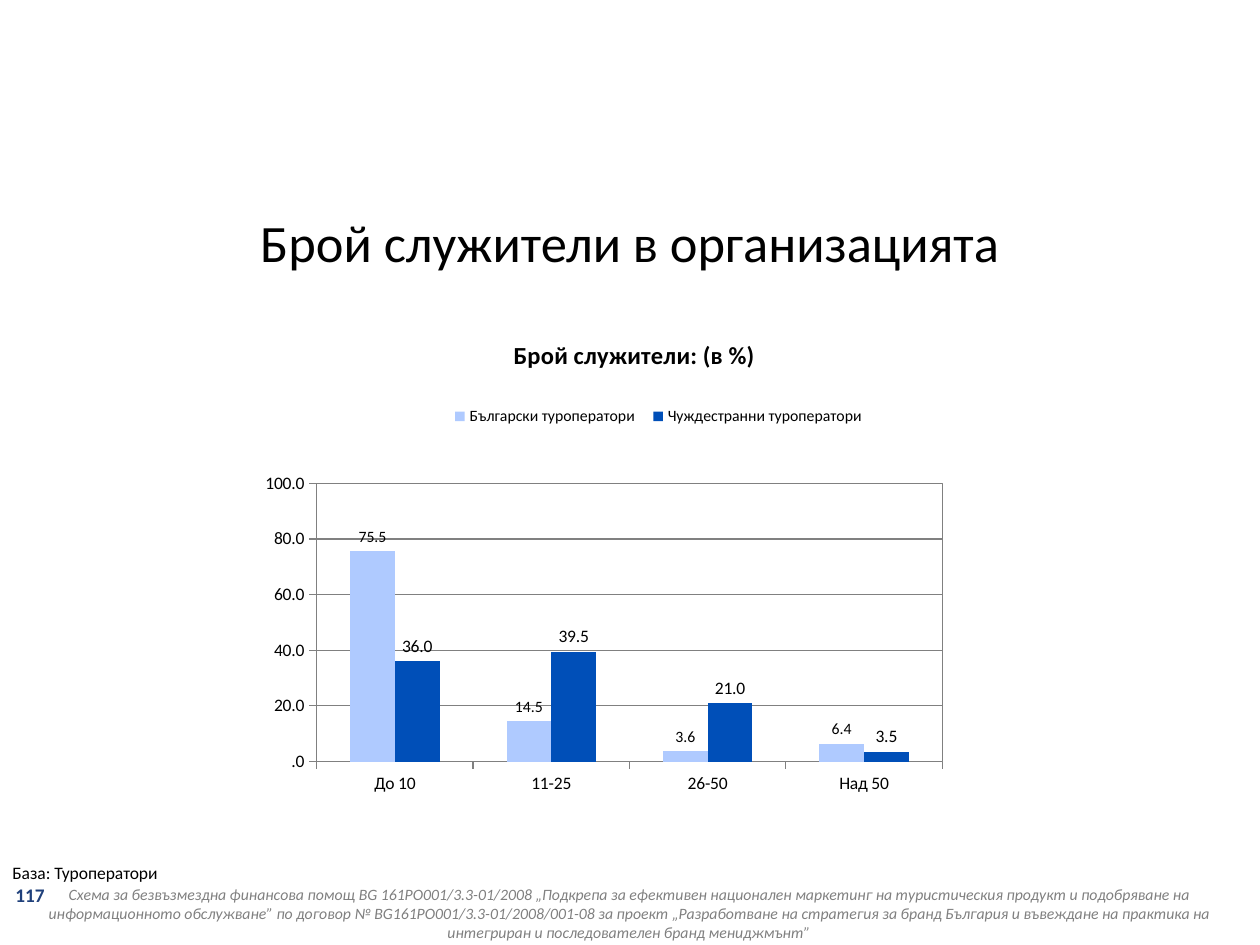
from lxml import etree
from pptx import Presentation
from pptx.chart.data import CategoryChartData
from pptx.dml.color import RGBColor
from pptx.enum import chart as ch, text
from pptx.oxml import ns
from pptx.util import Pt

BLACK = RGBColor(0x00, 0x00, 0x00)
GRAY = RGBColor(0x80, 0x80, 0x80)
NAVY = RGBColor(0x1F, 0x40, 0x7B)
LIGHT_BLUE = RGBColor(0xAF, 0xCA, 0xFF)
DARK_BLUE = RGBColor(0x00, 0x4F, 0xB8)
FONT = "Calibri"
NUMBERS = "####.0"

deck = Presentation()
deck.slide_width, deck.slide_height = Pt(720), Pt(540)
page = deck.slides.add_slide(deck.slide_layouts[6])


def style(font, size, color=BLACK, bold=False, italic=False):
    font.name, font.size, font.bold, font.italic = FONT, Pt(size), bold, italic
    font.color.rgb = color


def place(parent, **fractions):
    """Give a chart part a manual layout in fractions of the chart."""
    for old in parent.findall(ns.qn("c:layout")):
        parent.remove(old)
    layout = etree.Element(ns.qn("c:layout"))
    manual = etree.SubElement(layout, ns.qn("c:manualLayout"))
    if parent.tag == ns.qn("c:plotArea"):
        etree.SubElement(manual, ns.qn("c:layoutTarget")).set("val", "inner")
    for name in ("xMode", "yMode"):
        etree.SubElement(manual, ns.qn("c:" + name)).set("val", "edge")
    for name, value in fractions.items():
        etree.SubElement(manual, ns.qn("c:" + name)).set("val", str(value))
    # The layout follows the title text or the legend position
    first = parent.tag == ns.qn("c:plotArea")
    parent.insert(0 if first else 1, layout)


# Footer, page number, heading and base note
footer = (
    "Схема за безвъзмездна финансова помощ BG 161PO001/3.3-01/2008 "
    "„Подкрепа за ефективен национален маркетинг на туристическия продукт "
    "и подобряване на информационното обслужване” по договор "
    "№ BG161PO001/3.3-01/2008/001-08 за проект „Разработване на стратегия "
    "за бранд България и въвеждане на практика на интегриран и "
    "последователен бранд мениджмънт”"
)
LEFT, CENTER = text.PP_ALIGN.LEFT, text.PP_ALIGN.CENTER
TOP, MIDDLE = text.MSO_ANCHOR.TOP, text.MSO_ANCHOR.MIDDLE
texts = [
    # wording, (left, top, width, height), insets, align, anchor, font
    (footer, (0, 502, 718.5, 40), (7.2, 3.6), CENTER, TOP, (9, GRAY, False, True)),
    ("117", (3, 502, 33, 29), (5.76, 2.88), LEFT, TOP, (11, NAVY, True)),
    ("Брой служители в организацията", (0, 114, 720, 48), (7.2, 3.6),
     CENTER, MIDDLE, (30,)),
    ("База: Туроператори", (0, 489, 121.5, 19.5), (7.2, 3.6), LEFT, TOP, (10,)),
]
for wording, spot, (side, edge), align, anchor, look in texts:
    box = page.shapes.add_textbox(*map(Pt, spot))
    frame = box.text_frame
    frame.word_wrap = True
    frame.vertical_anchor = anchor
    frame.margin_left = frame.margin_right = Pt(side)
    frame.margin_top = frame.margin_bottom = Pt(edge)
    para = frame.paragraphs[0]
    para.alignment = align
    span = para.add_run()
    span.text = wording
    style(span.font, *look)

# Column chart of staff numbers
data = CategoryChartData(number_format=NUMBERS)
data.categories = ["До 10", "11-25", "26-50", "Над 50"]
data.add_series("Български туроператори", (75.5, 14.5, 3.6, 6.4))
data.add_series("Чуждестранни туроператори", (36, 39.5, 21, 3.5))
chart = page.shapes.add_chart(
    ch.XL_CHART_TYPE.COLUMN_CLUSTERED, Pt(82), Pt(179), Pt(550), Pt(294.5), data
).chart
style(chart.font, 10)

# Chart title and legend
chart.has_title = True
span = chart.chart_title.text_frame.paragraphs[0].add_run()
span.text = "Брой служители: (в %)"
style(span.font, 14, bold=True)
chart.chart_title.include_in_layout = True
place(chart.chart_title._element, x=0.38, y=0.04)
chart.has_legend = True
chart.legend.position = ch.XL_LEGEND_POSITION.TOP
chart.legend.include_in_layout = False
style(chart.legend.font, 9)
place(chart.legend._element, x=0.31, y=0.17, w=0.45, h=0.06)

# Plot area with a gray frame
plot_area = chart._chartSpace.chart.plotArea
place(plot_area, x=0.18, y=0.33, w=0.65, h=0.54)
frame_line = etree.SubElement(
    etree.SubElement(plot_area, ns.qn("c:spPr")), ns.qn("a:ln"), w="9525")
fill = etree.SubElement(frame_line, ns.qn("a:solidFill"))
etree.SubElement(fill, ns.qn("a:srgbClr")).set("val", str(GRAY))

# Axes
scale = chart.value_axis
scale.minimum_scale, scale.maximum_scale, scale.major_unit = 0, 100, 20
scale.has_major_gridlines = True
scale.major_gridlines.format.line.color.rgb = GRAY
scale.major_gridlines.format.line.width = Pt(0.75)
scale.tick_labels.number_format = NUMBERS
scale.tick_labels.number_format_is_linked = False
for axis in (chart.category_axis, scale):
    axis.major_tick_mark = ch.XL_TICK_MARK.OUTSIDE
    axis.minor_tick_mark = ch.XL_TICK_MARK.NONE
    axis.format.line.color.rgb = GRAY
    axis.format.line.width = Pt(0.75)
    style(axis.tick_labels.font, 10)

# Columns and their values
plot = chart.plots[0]
plot.gap_width, plot.overlap = 150, 0
plot.vary_by_categories = False
for series, color, size in zip(plot.series, (LIGHT_BLUE, DARK_BLUE), (9, 10)):
    series.format.fill.solid()
    series.format.fill.fore_color.rgb = color
    labels = series.data_labels
    labels.show_value = True
    labels.number_format = NUMBERS
    labels.number_format_is_linked = False
    labels.position = ch.XL_LABEL_POSITION.OUTSIDE_END
    style(labels.font, size)

deck.save("out.pptx")
